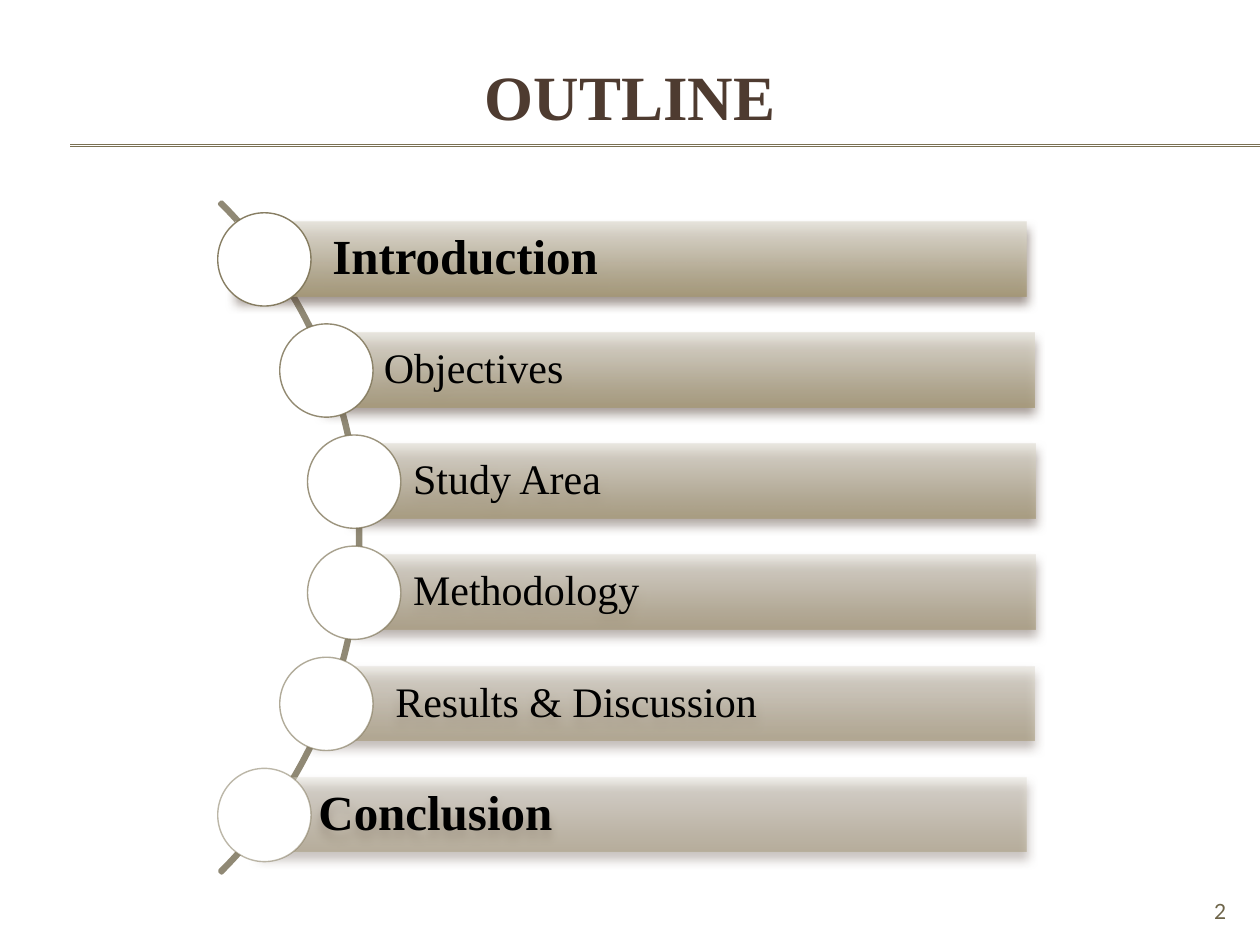
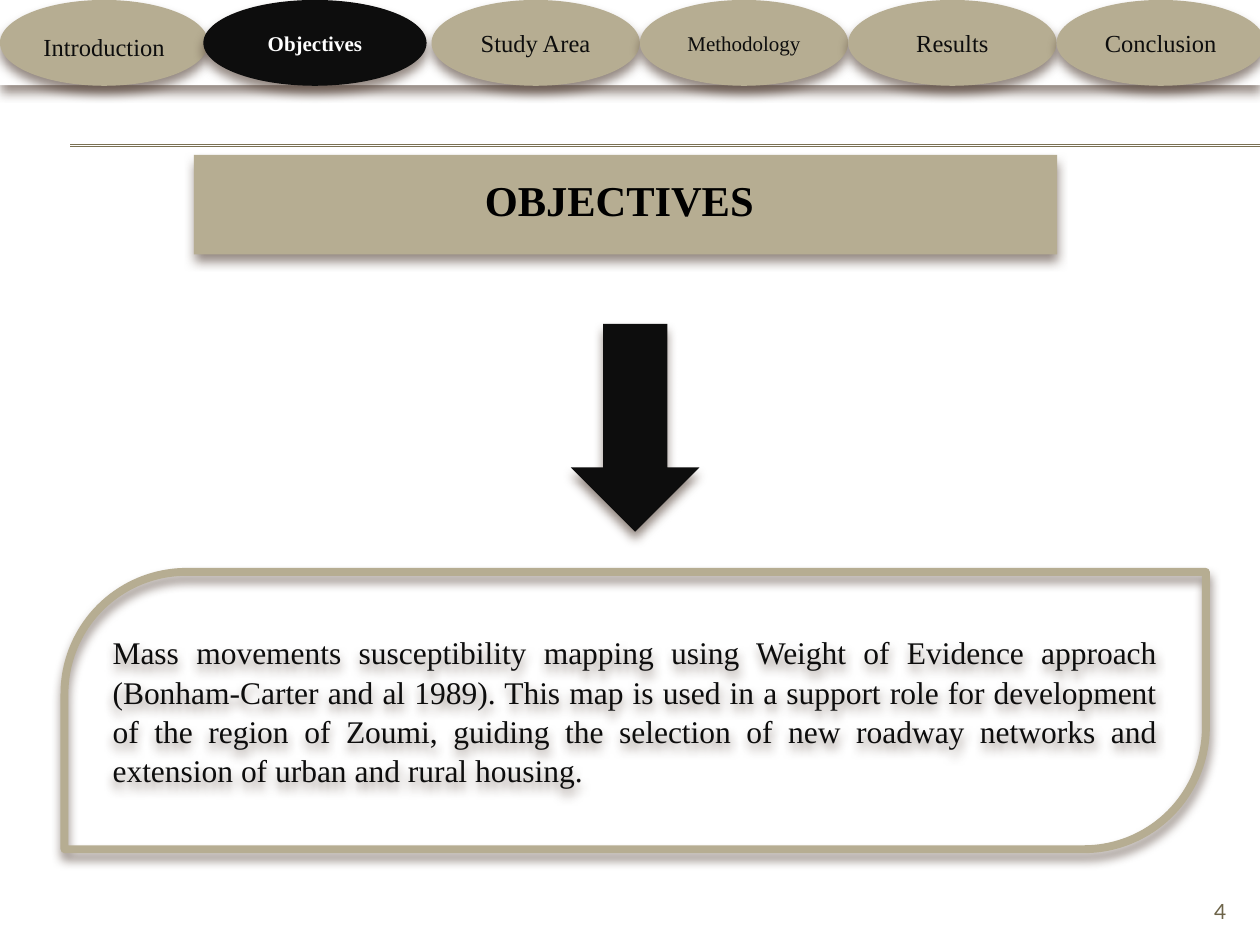
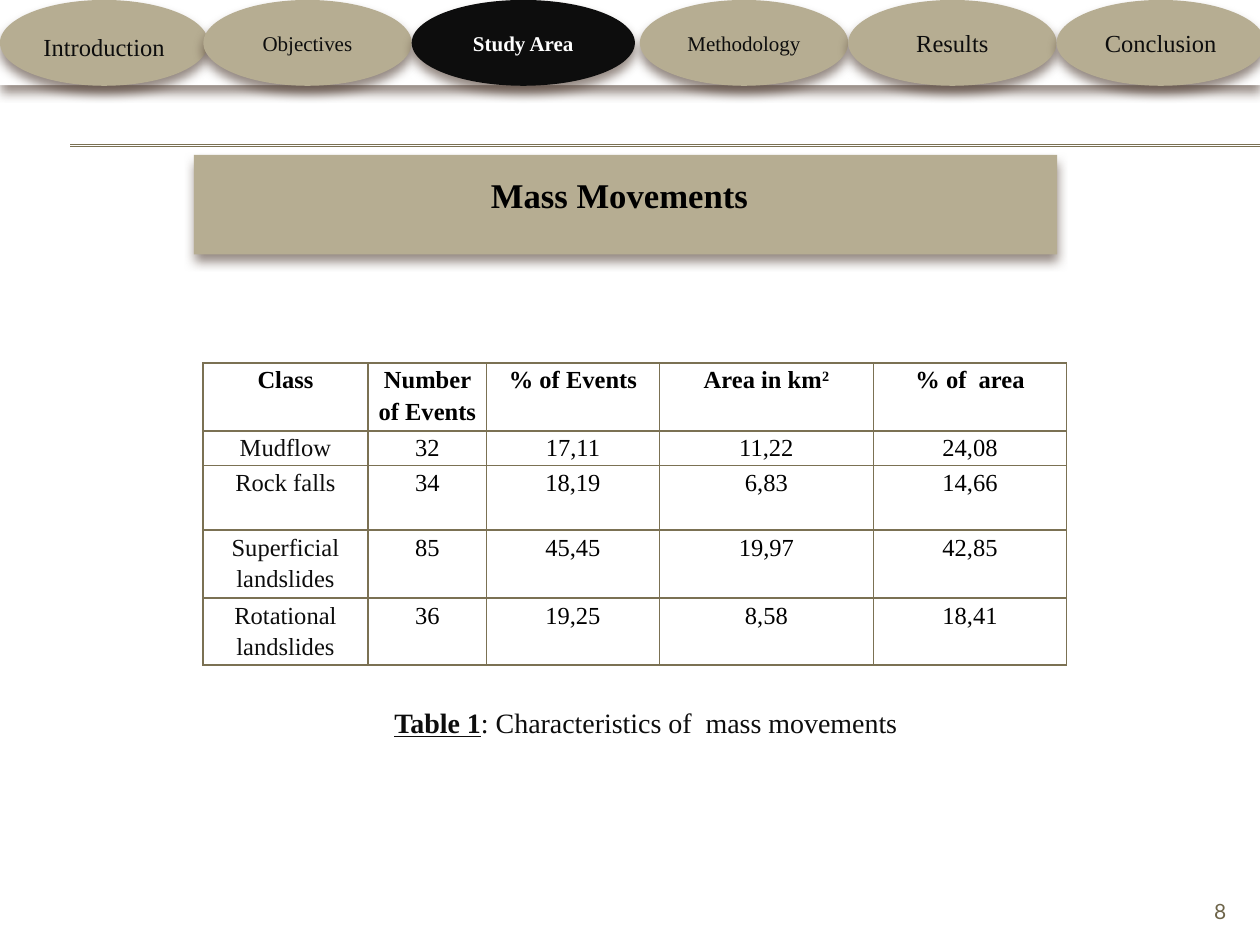
"""Build three slides on mass movement mapping: outline, objectives, study area."""
from dataclasses import dataclass, replace
from typing import Any

from lxml import etree
from pptx import Presentation
from pptx import util as u
from pptx.dml.color import RGBColor
from pptx.enum import shapes, text
from pptx.oxml.ns import qn

Kind = shapes.MSO_SHAPE
Align = text.PP_ALIGN
Anchor = text.MSO_ANCHOR


@dataclass(frozen=True)
class Theme:
    """Colours, fonts and type sizes of the deck."""
    serif: str = "Times New Roman"
    sans: str = "Lato"
    white: str = "FFFFFF"
    black: str = "000000"
    ink: str = "0D0D0D"
    brown: str = "4E3B30"
    olive: str = "7B7153"
    arc: str = "908975"
    sand: str = "B6AD92"
    page: str = "6D6449"
    fade: tuple = ((0, "E5E2DA"), (72, "B3A98F"), (100, "A59876"))
    title: float = 36
    head: float = 24.3
    sub: float = 19.8
    strong: float = 28
    item: float = 24
    body: float = 18
    note: float = 16
    tab: float = 14
    small: float = 12


T = Theme()


@dataclass(frozen=True)
class Box:
    """A place on the slide in centimetres."""
    x: float
    y: float
    w: float
    h: float

    def emu(self) -> tuple:
        """Give left, top, width and height as lengths."""
        return tuple(u.Cm(v) for v in (self.x, self.y, self.w, self.h))


@dataclass(frozen=True)
class Style:
    """The look of a run of text."""
    size: float
    color: str = T.ink
    bold: bool = False
    line: bool = False
    face: str = T.serif
    lift: int = 0


@dataclass(frozen=True)
class Row:
    """One bar of the outline with its circle."""
    label: str
    left: float
    width: float
    dot: float
    pad: float = 1.19
    strong: bool = False


@dataclass(frozen=True)
class Tab:
    """One step of the section trail."""
    label: str
    size: float = T.tab
    drop: float = 0


PLAIN = Style(T.tab, T.black)
BOLD = replace(PLAIN, bold=True)
BANNER = Box(3.91, 3.12, 17.4, 2.01)

ROWS = (
    Row("Introduction", 4.75, 15.95, 4.39, 1.95, True),
    Row("Objectives", 6.55, 14.3, 5.64),
    Row("Study Area", 7.14, 13.74, 6.2),
    Row("Methodology", 7.14, 13.74, 6.2),
    Row("Results & Discussion", 6.3, 14.55, 5.64, 1.67),
    Row("Conclusion", 5.23, 15.47, 4.39, 1.19, True),
)
TABS = (
    Tab("Introduction", drop=0.14),
    Tab("Objectives", T.small),
    Tab("Study Area"),
    Tab("Methodology", T.small),
    Tab("Results"),
    Tab("Conclusion"),
)
HEADS = ("Class", "Number of Events", "% of Events", "Area in km", "% of  area")
EVENTS = (
    ("Mudflow", "32", "17,11", "11,22", "24,08"),
    ("Rock falls", "34", "18,19", "6,83", "14,66"),
    ("Superficial landslides", "85", "45,45", "19,97", "42,85"),
    ("Rotational landslides", "36", "19,25", "8,58", "18,41"),
)
COLS = (3.33, 2.39, 3.48, 4.32, 3.89)
HIGHS = (1.37, 0.69, 1.31, 1.37, 1.35)
GOAL = (
    "Mass movements susceptibility mapping using Weight of Evidence approach "
    "(Bonham-Carter and al 1989). This map is used in a support role for "
    "development of the region of Zoumi, guiding the selection of new roadway "
    "networks and extension of urban and rural housing."
)


def put(item: Any, **vals: Any) -> None:
    """Set each named value on an object."""
    for name, val in vals.items():
        setattr(item, name, val)


def rgb(code: str) -> RGBColor:
    """Turn a hex code into a colour."""
    return RGBColor.from_string(code)


def node(top: Any, tag: str, **vals: Any) -> Any:
    """Append a drawing element with its attributes."""
    return etree.SubElement(top, qn(f"a:{tag}"), {k: str(v) for k, v in vals.items()})


def tint(top: Any, code: str, alpha: int = 100) -> None:
    """Append a colour with its opacity in percent."""
    hue = node(top, "srgbClr", val=code)
    if alpha < 100:
        node(hue, "alpha", val=alpha * 1000)


def shade(shape: Any) -> None:
    """Cast the soft brown shadow below a shape."""
    shape.shadow.inherit = False
    effect = shape.element.spPr.find(qn("a:effectLst"))
    cast = node(effect, "outerShdw", blurRad=u.Pt(6), dist=u.Pt(4),
                dir=90 * 60000, rotWithShape=0)
    tint(cast, T.brown, 60)


def paint(shape: Any, fill: str = "", line: str = "", width: float = 0,
          soft: bool = True) -> None:
    """Set fill, outline and shadow of a shape."""
    for part, code in ((shape.fill, fill), (shape.line.fill, line)):
        if code:
            part.solid()
            part.fore_color.rgb = rgb(code)
        else:
            part.background()
    if line:
        shape.line.width = u.Pt(width)
    if soft:
        shade(shape)
    else:
        shape.shadow.inherit = False


def draw(slide: Any, kind: Any, box: Box, **look: Any) -> Any:
    """Add a painted preset shape."""
    shape = slide.shapes.add_shape(kind, *box.emu())
    paint(shape, **look)
    return shape


def write(frame: Any, *runs: tuple[str, Style], align: Any = Align.CENTER,
          space: float = 1, **form: Any) -> None:
    """Fill a text frame with one paragraph of styled runs."""
    put(frame, **{"word_wrap": True, "auto_size": text.MSO_AUTO_SIZE.NONE,
                  "vertical_anchor": Anchor.MIDDLE, **form})
    spell(frame.paragraphs[0], runs, align, space)


def spell(para: Any, runs: tuple, align: Any, space: float) -> None:
    """Put styled runs into a paragraph."""
    put(para, alignment=align, line_spacing=space)
    for words, style in runs:
        run = para.add_run()
        run.text = words
        put(run.font, name=style.face, size=u.Pt(style.size), bold=style.bold,
            underline=style.line)
        run.font.color.rgb = rgb(style.color)
        if style.lift:
            run.font._element.set("baseline", str(style.lift * 1000))


def label(slide: Any, box: Box, *runs: tuple[str, Style], **form: Any) -> None:
    """Add a text box."""
    write(slide.shapes.add_textbox(*box.emu()).text_frame, *runs, **form)


def place(slide: Any, box: Box) -> Any:
    """Move the title placeholder and return it."""
    title = slide.shapes.title
    put(title, **dict(zip(("left", "top", "width", "height"), box.emu())))
    return title


def rule(slide: Any) -> None:
    """Give the layout its double rule."""
    for i, y in enumerate((2.92, 2.95)):
        line = slide.shapes.add_connector(
            shapes.MSO_CONNECTOR.STRAIGHT, u.Cm(1.42), u.Cm(y), u.Cm(25.4), u.Cm(y))
        line.line.color.rgb = rgb(T.olive)
        line.line.width = u.Pt(0.75)
        node(line.element.spPr, "effectLst")
        line.element.find(f".//{qn('p:cNvPr')}").set("id", str(50 + i))
        slide.slide_layout.shapes.element.append(line.element)


def number(slide: Any, page: int) -> None:
    """Print the page number."""
    label(slide, Box(22.86, 17.98, 2.11, 0.69),
          (str(page), Style(T.small, T.page, face=T.sans)),
          align=Align.RIGHT, vertical_anchor=Anchor.TOP)


def trail(slide: Any, now: int) -> None:
    """Draw the section trail with the current step in black."""
    draw(slide, Kind.RECTANGLE, Box(0, -0.08, 25.4, 1.8), fill=T.white)
    for i, tab in enumerate(TABS):
        live = i == now
        left = 4.2 * i + 0.3 if i > now else max(0, 4.2 * i - 0.1)
        if i == 0:
            left = 0
        oval = draw(slide, Kind.OVAL, Box(left, 0, 4.5 if live else 4.2, 1.73),
                    fill=T.ink if live else T.sand)
        style = Style(T.small, T.white, True) if live else Style(tab.size)
        write(oval.text_frame, (tab.label, style), word_wrap=False,
              margin_left=0, margin_right=0, margin_bottom=0,
              margin_top=u.Cm(tab.drop))


def banner(slide: Any, words: str, size: float) -> None:
    """Format the title as a sand banner."""
    title = place(slide, BANNER)
    paint(title, fill=T.sand)
    write(title.text_frame, (words, Style(size, T.black, True)),
          vertical_anchor=Anchor.TOP, margin_top=u.Cm(0.38),
          margin_left=u.Cm(0.25), margin_right=u.Cm(0.5))


def blend(shape: Any, alpha: int) -> None:
    """Replace the fill with the vertical sand fade."""
    grad = etree.Element(qn("a:gradFill"), rotWithShape="1")
    stops = node(grad, "gsLst")
    for pos, code in T.fade:
        tint(node(stops, "gs", pos=pos * 1000), code, alpha)
    node(grad, "lin", ang=90 * 60000, scaled=0)
    props = shape.element.spPr
    props.replace(props.find(qn("a:noFill")), grad)


def outline(slide: Any) -> None:
    """Draw the outline slide."""
    write(place(slide, Box(1.27, 0.33, 22.86, 3.18)).text_frame,
          ("OUTLINE", Style(T.title, T.brown, True)))
    arc = draw(slide, Kind.BLOCK_ARC, Box(-11.86, 1.27, 19.13, 19.13),
               line=T.arc, width=2, soft=False)
    for i, val in enumerate((189, 27, 0.003)):
        arc.adjustments[i] = val
    for i, row in enumerate(ROWS):
        top, alpha = 4.47 + 2.24 * i, 90 - 8 * i
        bar = draw(slide, Kind.RECTANGLE, Box(row.left, top, row.width, 1.5))
        blend(bar, alpha)
        size = T.strong if row.strong else T.item
        write(bar.text_frame, (row.label, Style(size, T.black, row.strong)),
              align=Align.LEFT, space=0.9, margin_left=u.Cm(row.pad))
        dot = draw(slide, Kind.OVAL, Box(row.dot, top - 0.18, 1.88, 1.88),
                   fill=T.white, line=T.olive, width=0.79, soft=False)
        hue = dot.line._ln.find(f".//{qn('a:srgbClr')}")
        node(hue, "alpha", val=alpha * 1000)


def goals(slide: Any) -> None:
    """Draw the objectives slide."""
    trail(slide, 1)
    banner(slide, "OBJECTIVES", T.head)
    draw(slide, Kind.DOWN_ARROW, Box(11.51, 6.53, 2.59, 4.19), fill=T.ink)
    card = draw(slide, Kind.ROUND_2_DIAG_RECTANGLE, Box(1.3, 11.53, 23.01, 5.59),
                line=T.sand, width=4.5)
    card.adjustments[0] = 0.44
    write(card.text_frame, (GOAL, Style(T.body)), align=Align.JUSTIFY, space=1.04)


def frame(cell: Any) -> None:
    """Give a cell four olive borders and no fill."""
    props = cell._tc.get_or_add_tcPr()
    for side in "LRTB":
        edge = node(props, f"ln{side}", w=u.Pt(1))
        tint(node(edge, "solidFill"), T.olive)
    cell.fill.background()


def events(slide: Any) -> None:
    """Add the table of mass movements."""
    box = Box(4.09, 7.32, sum(COLS), sum(HIGHS))
    grid = slide.shapes.add_table(len(HIGHS), len(COLS), *box.emu()).table
    put(grid, first_row=False, horz_banding=False)
    for col, wide in zip(grid.columns, COLS):
        col.width = u.Cm(wide)
    for row, high in zip(grid.rows, HIGHS):
        row.height = u.Cm(high)
    for r, words in enumerate((HEADS, *EVENTS)):
        for c, word in enumerate(words):
            cell = grid.cell(r, c)
            frame(cell)
            put(cell, margin_left=u.Cm(0.18), margin_right=u.Cm(0.18),
                margin_top=0, margin_bottom=0)
            style = BOLD if r == 0 else PLAIN if c else replace(PLAIN, color=T.ink)
            runs = [(word, style)]
            if word.endswith("km"):
                runs.append(("2", replace(style, lift=30)))
            spell(cell.text_frame.paragraphs[0], tuple(runs), Align.CENTER, 1.15)


def area(slide: Any) -> None:
    """Draw the study area slide."""
    trail(slide, 2)
    banner(slide, "Mass Movements", T.sub)
    label(slide, Box(7.7, 13.39, 12.7, 1.63),
          ("Table 1", Style(T.note, bold=True, line=True)),
          (": Characteristics of  mass movements", Style(T.note)),
          align=Align.LEFT, vertical_anchor=Anchor.BOTTOM)
    events(slide)


def main() -> None:
    """Build and save the deck."""
    deck = Presentation()
    put(deck, slide_width=u.Cm(25.4), slide_height=u.Cm(19.05))
    plan = deck.slide_layouts.get_by_name("Title Only")
    for i, (build, page) in enumerate(((outline, 2), (goals, 4), (area, 8))):
        slide = deck.slides.add_slide(plan)
        if i == 0:
            rule(slide)
        build(slide)
        number(slide, page)
    deck.save("out.pptx")


if __name__ == "__main__":
    main()
